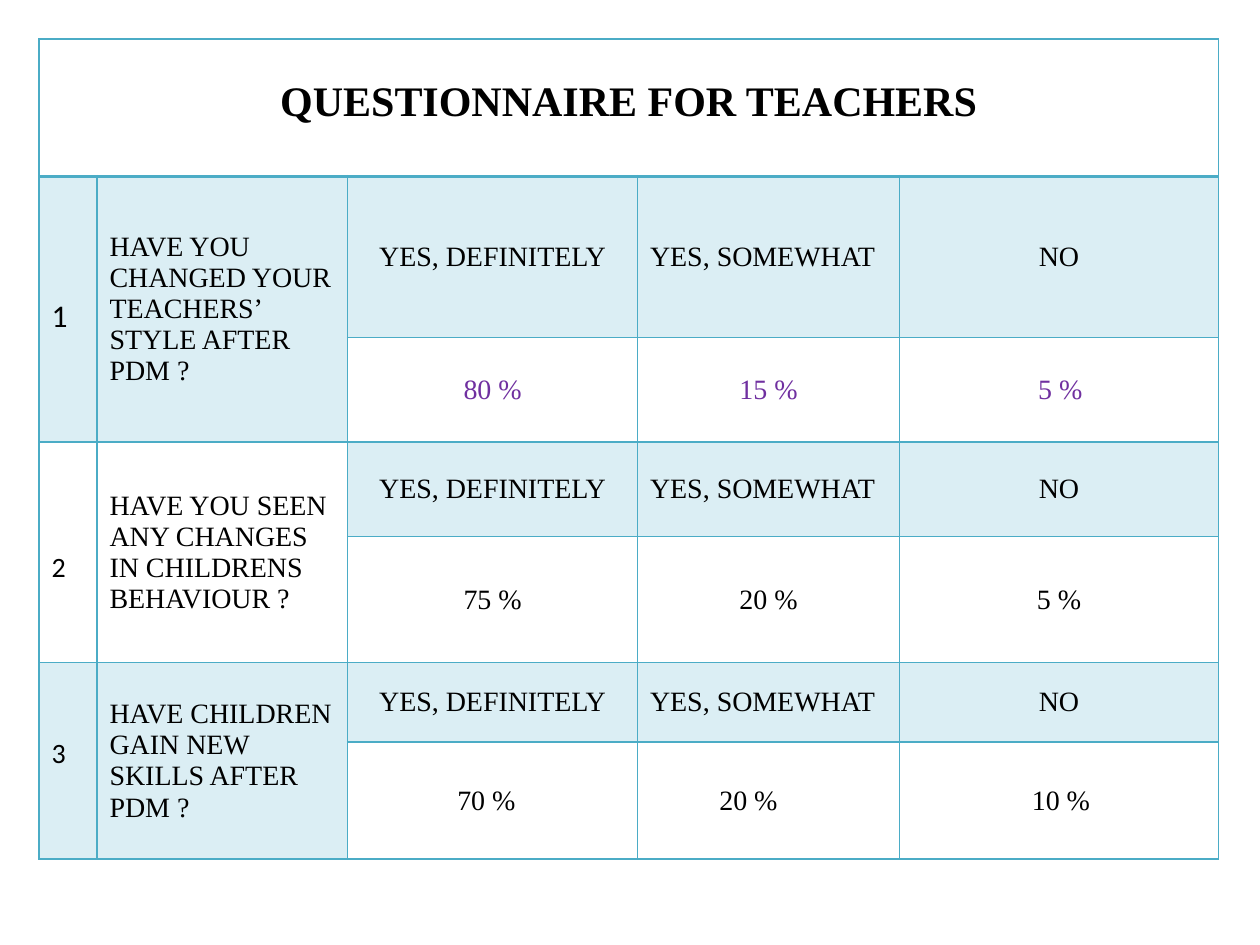
from dataclasses import dataclass

from lxml import etree
from pptx import Presentation
from pptx.dml.color import RGBColor
from pptx.enum.text import MSO_ANCHOR, PP_ALIGN
from pptx.oxml.ns import qn
from pptx.util import Emu, Inches, Pt

LEFT, CENTER = PP_ALIGN.LEFT, PP_ALIGN.CENTER
TOP, MIDDLE = MSO_ANCHOR.TOP, MSO_ANCHOR.MIDDLE
GRID_COLUMNS, GRID_ROWS = 100, 75
COLUMN_SPANS = (4.6, 19.9, 23, 20.8, 25.3)
ROW_SPANS = (10.9, 12.8, 8.3, 7.5, 10, 6.3, 9.3)


@dataclass(frozen=True)
class Theme:
    """Colours, fonts and type sizes of the slide."""
    ink: str = "000000"
    accent: str = "4BACC6"
    tint: str = "DBEEF4"
    highlight: str = "7030A0"
    serif: str = "Times New Roman"
    sans: str = "Calibri"
    title: int = 24
    lead: int = 18
    text: int = 16
    rule: int = 1
    heavy_rule: int = 2


class SurveySlide:
    """Draws a survey table on one slide in the given theme."""

    def __init__(self, presentation, theme):
        self.theme = theme
        self.slide = presentation.slides.add_slide(presentation.slide_layouts[6])
        self.column = presentation.slide_width / GRID_COLUMNS
        self.row = presentation.slide_height / GRID_ROWS

    def add_grid(self, left, top, column_spans, row_spans):
        """Adds an empty ruled table, placed in grid units."""
        widths = [Emu(round(span * self.column)) for span in column_spans]
        heights = [Emu(round(span * self.row)) for span in row_spans]
        self.table = self.slide.shapes.add_table(
            len(heights), len(widths), round(left * self.column),
            round(top * self.row), sum(widths), sum(heights)).table
        self.table.first_row = self.table.horz_banding = False
        for column, width in zip(self.table.columns, widths):
            column.width = width
        for row, height in zip(self.table.rows, heights):
            row.height = height
        for index, row in enumerate(self.table.rows):
            for cell in row.cells:
                cell.fill.background()
                self.rule_cell(cell, heavy={0: "lnB", 1: "lnT"}.get(index))

    def rule_cell(self, cell, heavy):
        """Draws the four borders of a cell, one of them heavier."""
        properties = cell._tc.get_or_add_tcPr()
        for index, side in enumerate(("lnL", "lnR", "lnT", "lnB")):
            weight = self.theme.heavy_rule if side == heavy else self.theme.rule
            line = etree.Element(qn(f"a:{side}"), w=str(Pt(weight)))
            fill = etree.SubElement(line, qn("a:solidFill"))
            etree.SubElement(fill, qn("a:srgbClr"), val=self.theme.accent)
            properties.insert(index, line)

    def fill_cell(self, row, column, text, align=LEFT, anchor=MIDDLE, fill=None,
                  color=None, rows=1, columns=1, margins=None, **font_format):
        """Fills one cell, merged over the given rows and columns."""
        cell = self.table.cell(row, column)
        if rows * columns > 1:
            cell.merge(self.table.cell(row + rows - 1, column + columns - 1))
        if fill:
            cell.fill.solid()
            cell.fill.fore_color.rgb = RGBColor.from_string(fill)
        cell.vertical_anchor = anchor
        for side, inches in (margins or {}).items():
            setattr(cell, f"margin_{side}", Inches(inches))
        paragraph = cell.text_frame.paragraphs[0]
        paragraph.alignment = align
        run = paragraph.add_run()
        run.text = text
        style = {"name": self.theme.serif, "size": Pt(self.theme.text),
                 "bold": False} | font_format
        for attribute, value in style.items():
            setattr(run.font, attribute, value)
        run.font.color.rgb = RGBColor.from_string(color or self.theme.ink)

    def add_title(self, text):
        """Sets the heading across the first row."""
        self.fill_cell(0, 0, text, CENTER, TOP, columns=len(self.table.columns),
                       margins={"top": 0.32}, size=Pt(self.theme.title), bold=True)

    def add_question(self, number, question, shares, indents, number_top,
                     fill=None, color=None, number_size=None):
        """Adds one numbered question with its answers and their shares."""
        row = 2 * number - 1
        self.fill_cell(row, 0, str(number), anchor=TOP, fill=fill, rows=2,
                       margins={"top": number_top}, name=self.theme.sans,
                       size=Pt(number_size or self.theme.text))
        self.fill_cell(row, 1, question, fill=fill, rows=2)
        answers = (("YES, DEFINITELY", CENTER), ("YES, SOMEWHAT", LEFT), ("NO", CENTER))
        for column, ((answer, align), share, indent) in enumerate(
                zip(answers, shares, indents), start=2):
            self.fill_cell(row, column, answer, align, fill=self.theme.tint)
            self.fill_cell(row + 1, column, f"{share} %", LEFT if indent else CENTER,
                           color=color, margins={"left": indent} if indent else None)


def main():
    """Builds the questionnaire slide and saves it."""
    presentation = Presentation()
    presentation.slide_width, presentation.slide_height = Inches(10), Inches(7.5)
    theme = Theme()
    survey = SurveySlide(presentation, theme)
    survey.add_grid(3.1, 3.1, COLUMN_SPANS, ROW_SPANS)
    survey.add_title("QUESTIONNAIRE FOR TEACHERS")
    survey.add_question(
        1, "HAVE YOU CHANGED YOUR TEACHERS’ STYLE AFTER PDM ?", (80, 15, 5),
        (None, None, 1.1), 0.96, theme.tint, theme.highlight, theme.lead)
    survey.add_question(
        2, "HAVE YOU SEEN ANY CHANGES IN CHILDRENS BEHAVIOUR ?", (75, 20, 5),
        (None, None, None), 0.86)
    survey.add_question(
        3, "HAVE CHILDREN GAIN NEW SKILLS AFTER PDM ?", (70, 20, 10),
        (0.87, 0.65, 1.05), 0.59, theme.tint)
    presentation.save("out.pptx")


if __name__ == "__main__":
    main()
